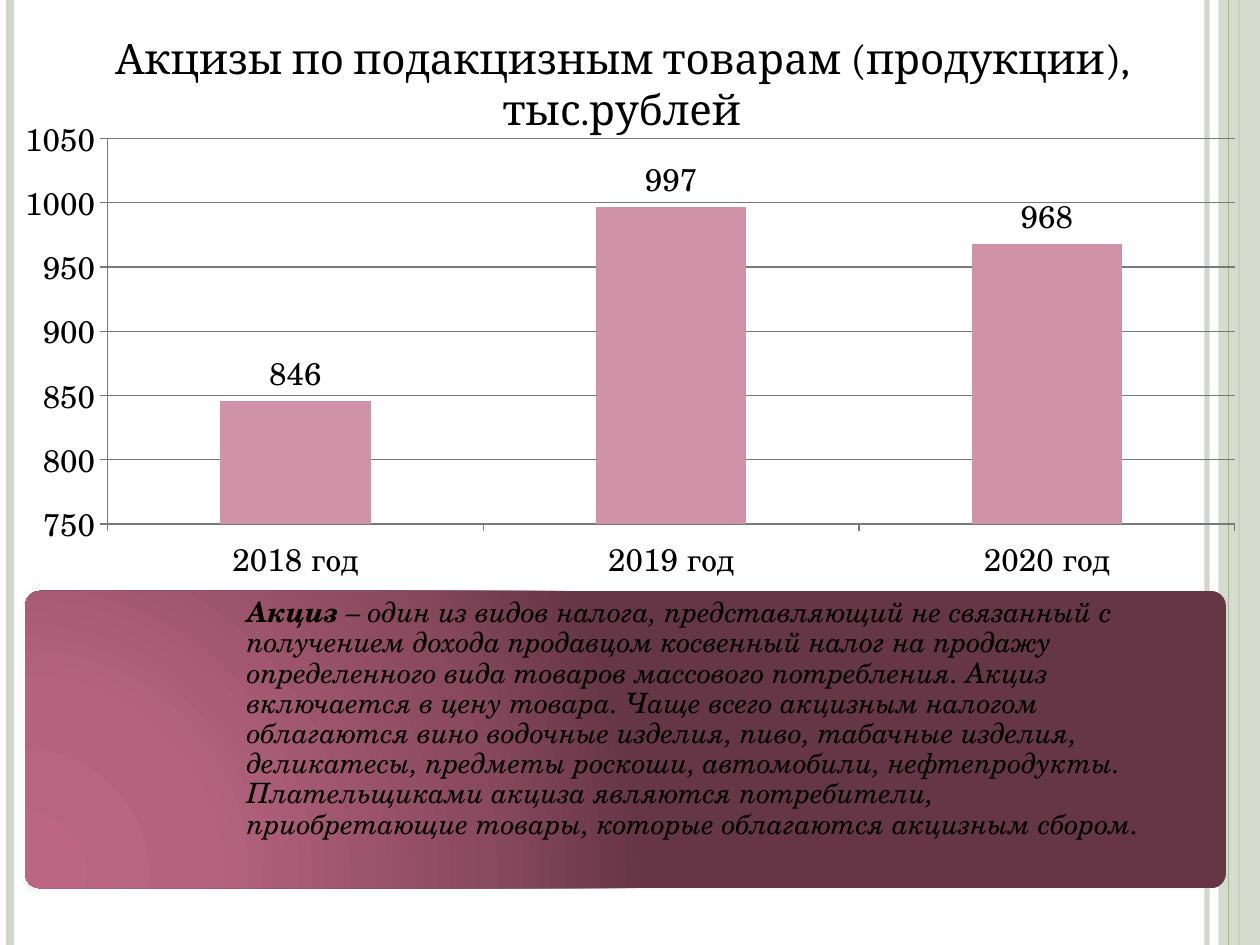
from dataclasses import dataclass

from lxml.etree import SubElement
from pptx import Presentation
from pptx.chart.data import CategoryChartData
from pptx.dml.color import RGBColor
from pptx.enum.chart import XL_CHART_TYPE, XL_LABEL_POSITION, XL_TICK_MARK
from pptx.enum.shapes import MSO_CONNECTOR, MSO_SHAPE
from pptx.enum.text import MSO_ANCHOR, MSO_AUTO_SIZE, PP_ALIGN
from pptx.oxml.ns import qn
from pptx.util import Inches, Pt


@dataclass(frozen=True)
class Theme:
    """Colours, fonts and type sizes of the slide."""
    text: str = "000000"
    pale: str = "CFD7C7"
    green: str = "A5B592"
    bar: str = "D092A7"
    axis: str = "787878"
    panel: tuple = ((0, "BB6783"), (30, "B4637F"), (75, "89495E"), (100, "653646"))
    title_font: str = "Cambria"
    body_font: str = "TeX Gyre Schola"
    title_size: float = 24
    chart_size: float = 17.9
    body_size: float = 16


def rgb(value):
    """Turn a hex string into a colour."""
    return RGBColor.from_string(value)


def child(parent, tag, **attributes):
    """Append a DrawingML element to its parent."""
    return SubElement(parent, qn(tag), {key: str(value) for key, value in attributes.items()})


def set_opacity(element, percent):
    """Set the opacity of the solid colour inside an element."""
    child(next(element.iter(qn("a:srgbClr"))), "a:alpha", val=percent * 1000)


class SlideBuilder:
    """Holds the theme and the current slide."""

    def __init__(self, slide, theme):
        self.slide = slide
        self.shapes = slide.shapes
        self.theme = theme

    def style_font(self, font, name, size):
        """Apply the text colour, a typeface and a size."""
        font.name = name
        font.size = Pt(size)
        font.color.rgb = rgb(self.theme.text)

    def stripe(self, x, color, width, opacity=100):
        """Draw a vertical line over the full slide height."""
        stripe = self.shapes.add_connector(
            MSO_CONNECTOR.STRAIGHT, Inches(x), 0, Inches(x), Inches(7.5))
        stripe.line.color.rgb = rgb(color)
        stripe.line.width = Pt(width)
        if opacity < 100:
            set_opacity(stripe.line._get_or_add_ln(), opacity)
        child(stripe._element.spPr, "a:effectLst")
        return stripe

    def band(self, left, top, width, height, color, opacity):
        """Draw a translucent rectangle."""
        band = self.shapes.add_shape(
            MSO_SHAPE.RECTANGLE, *map(Inches, (left, top, width, height)))
        band.fill.solid()
        band.fill.fore_color.rgb = rgb(color)
        set_opacity(band._element.spPr, opacity)
        band.line.fill.background()
        band.shadow.inherit = False
        return band

    def title(self, text, left, top, width, height):
        """Place and fill the title placeholder."""
        title = self.shapes.title
        title.left, title.top, title.width, title.height = map(
            Inches, (left, top, width, height))
        frame = title.text_frame
        frame.text = text
        frame.word_wrap = True
        frame.auto_size = MSO_AUTO_SIZE.NONE
        frame.vertical_anchor = MSO_ANCHOR.TOP
        paragraph = frame.paragraphs[0]
        paragraph.alignment = PP_ALIGN.CENTER
        self.style_font(paragraph.font, self.theme.title_font, self.theme.title_size)

    def column_chart(self, name, values, left, top, width, height):
        """Add a column chart with one labelled series."""
        data = CategoryChartData()
        data.categories = list(values)
        data.add_series(name, list(values.values()))
        chart = self.shapes.add_chart(
            XL_CHART_TYPE.COLUMN_CLUSTERED,
            *map(Inches, (left, top, width, height)), data).chart
        chart.has_title = False
        chart.has_legend = False
        self.style_font(chart.font, self.theme.body_font, self.theme.chart_size)

        value_axis = chart.value_axis
        value_axis.minimum_scale = 750
        value_axis.maximum_scale = 1050
        value_axis.major_unit = 50
        value_axis.has_major_gridlines = True
        for axis in (chart.category_axis, value_axis):
            axis.major_tick_mark = XL_TICK_MARK.OUTSIDE
        for line in (chart.category_axis.format.line, value_axis.format.line,
                     value_axis.major_gridlines.format.line):
            line.color.rgb = rgb(self.theme.axis)
            line.width = Pt(0.75)

        plot = chart.plots[0]
        plot.gap_width = 150
        plot.vary_by_categories = False
        plot.has_data_labels = True
        plot.data_labels.show_value = True
        plot.data_labels.position = XL_LABEL_POSITION.OUTSIDE_END
        fill = plot.series[0].format.fill
        fill.solid()
        fill.fore_color.rgb = rgb(self.theme.bar)

    def gradient_panel(self, left, top, width, height):
        """Draw a rounded panel with a radial gradient and a soft shadow."""
        panel = self.shapes.add_shape(
            MSO_SHAPE.ROUNDED_RECTANGLE, *map(Inches, (left, top, width, height)))
        panel.adjustments[0] = 0.05
        panel.line.fill.background()
        panel.shadow.inherit = False
        properties = panel._element.spPr

        gradient = child(properties, "a:gradFill", rotWithShape=1)
        properties.find(qn("a:prstGeom")).addnext(gradient)
        stops = child(gradient, "a:gsLst")
        for position, color in self.theme.panel:
            stop = child(stops, "a:gs", pos=position * 1000)
            child(stop, "a:srgbClr", val=color)
        circle = child(gradient, "a:path", path="circle")
        child(circle, "a:fillToRect", l=5000, t=100000, r=120000, b=10000)

        shadow = child(properties.find(qn("a:effectLst")), "a:outerShdw",
                       blurRad=Pt(4), dist=Pt(1.6), dir=5400000, rotWithShape=0)
        child(shadow, "a:srgbClr", val=self.theme.text)
        set_opacity(shadow, 42)

    def definition(self, term, meaning, left, top, width, height):
        """Write an italic definition that opens with a bold term."""
        frame = self.shapes.add_textbox(
            *map(Inches, (left, top, width, height))).text_frame
        frame.word_wrap = True
        frame.margin_left = frame.margin_right = frame.margin_bottom = 0
        frame.margin_top = Inches(0.06)
        paragraph = frame.paragraphs[0]
        paragraph.line_spacing = 0.9
        self.style_font(paragraph.font, self.theme.body_font, self.theme.body_size)
        paragraph.font.italic = True
        for text, bold in ((term, True), (meaning, False)):
            run = paragraph.add_run()
            run.text = text
            run.font.bold = bold


def main():
    """Build the excise slide."""
    presentation = Presentation()
    presentation.slide_width = Inches(10)
    presentation.slide_height = Inches(7.5)
    theme = Theme()
    slide = presentation.slides.add_slide(presentation.slide_layouts[5])
    builder = SlideBuilder(slide, theme)

    builder.stripe(9.58, theme.pale, 3, opacity=93)
    builder.stripe(0.08, theme.pale, 4.5)
    band_axis = builder.stripe(9.83, theme.green, 1.5)
    side_band = builder.band(9.67, 0, 0.33, 7.5, theme.pale, opacity=87)
    band_axis.begin_connect(side_band, 0)
    band_axis.end_connect(side_band, 2)
    builder.stripe(9.75, theme.green, 0.75)

    builder.title("Акцизы по подакцизным товарам (продукции), тыс.рублей",
                  0.27, 0.21, 9.33, 0.51)
    excise_by_year = {"2018 год": 846, "2019 год": 997, "2020 год": 968}
    builder.column_chart("Акцизы", excise_by_year, 0, 0.84, 10, 3.86)
    builder.gradient_panel(0.2, 4.69, 9.53, 2.36)
    builder.definition(
        "Акциз",
        " – один из видов налога, представляющий не связанный с получением дохода "
        "продавцом косвенный налог на продажу определенного вида товаров массового "
        "потребления. Акциз включается в цену товара. Чаще всего акцизным налогом "
        "облагаются вино водочные изделия, пиво, табачные изделия, деликатесы, "
        "предметы роскоши, автомобили, нефтепродукты. Плательщиками акциза являются "
        "потребители, приобретающие товары, которые облагаются акцизным сбором.",
        1.96, 4.69, 7.1, 2.36)
    presentation.save("out.pptx")


if __name__ == "__main__":
    main()
